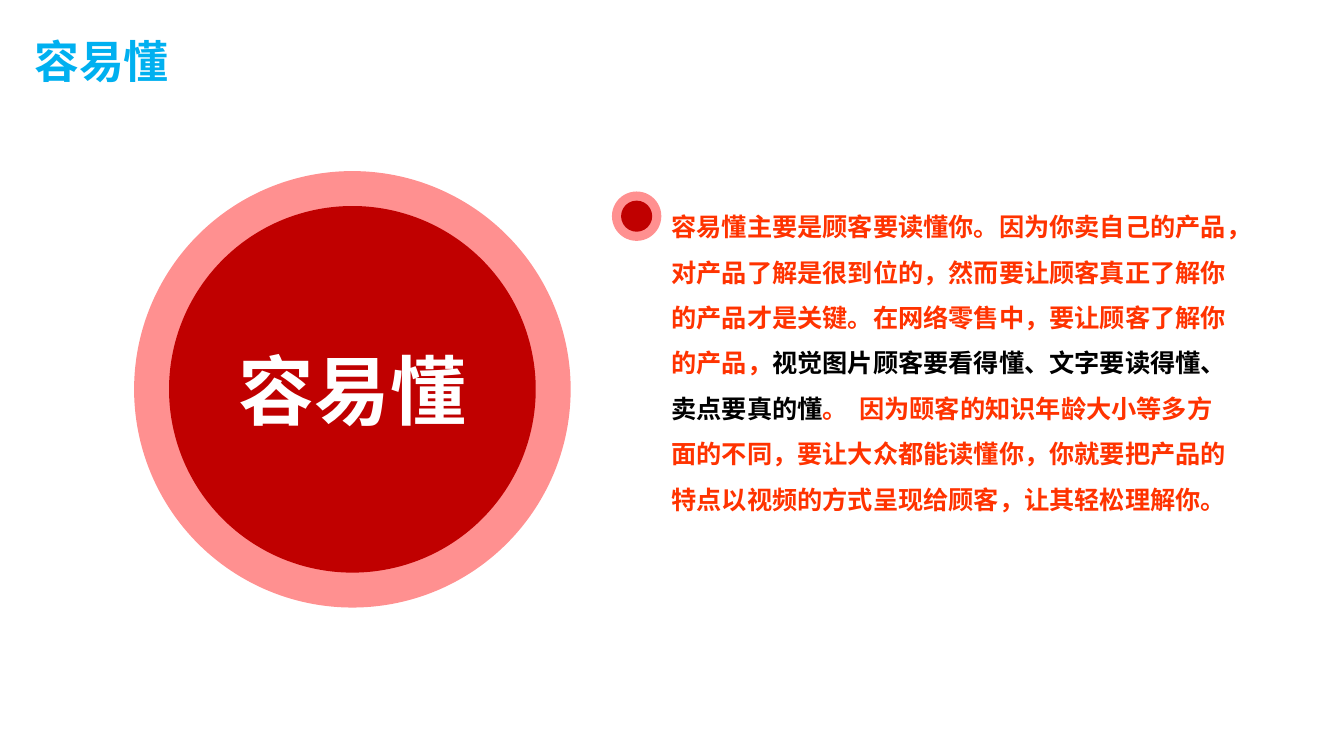
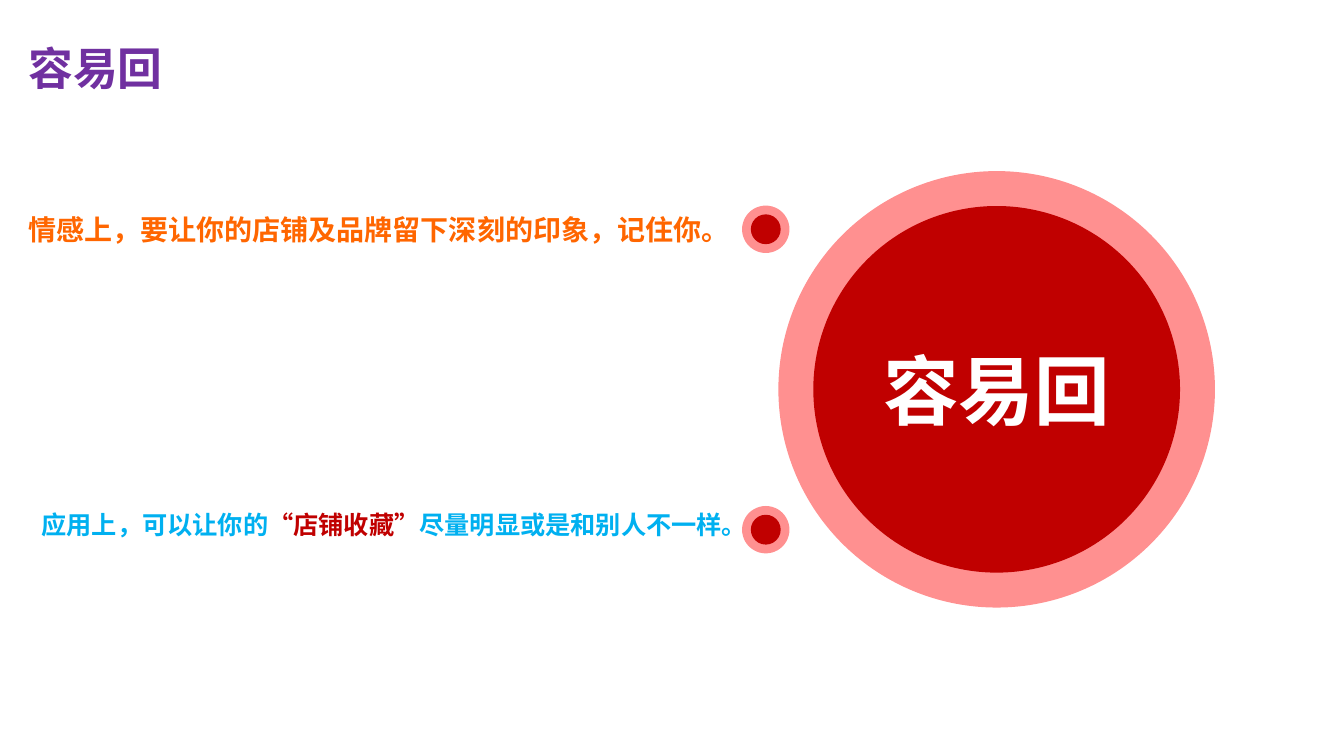
from pptx import Presentation, util as u
from pptx.dml.color import RGBColor
from pptx.enum import lang, shapes, text
from pptx.oxml.ns import qn
from lxml import etree

CJK, LATIN = "Noto Sans CJK SC", "Arial"
WHITE, BLACK, RED, PINK = "FFFFFF", "000000", "C00000", "FF9090"
ORANGE_RED, ORANGE, BLUE, PURPLE = "FF3300", "FF6600", "00B0F0", "7030A0"

prs = Presentation()
prs.slide_width, prs.slide_height = u.Inches(13.33), u.Inches(7.5)
W, H = prs.slide_width / 100, prs.slide_height / 100  # one percent of the slide


def rgb(code):
    return RGBColor.from_string(code)


def write(tf, runs, size, font, align=text.PP_ALIGN.LEFT,
          anchor=text.MSO_ANCHOR.TOP, wrap=True, spacing=1):
    """Fill a text frame with one unbulleted paragraph of (text, colour) runs."""
    tf.auto_size = text.MSO_AUTO_SIZE.NONE
    tf.word_wrap, tf.vertical_anchor = wrap, anchor
    p = tf.paragraphs[0]
    p.alignment, p.line_spacing, p.space_before = align, spacing, u.Pt(0)
    pPr = p._p.get_or_add_pPr()
    pPr.set("marL", "0")
    pPr.set("indent", "0")
    etree.SubElement(pPr, qn("a:buNone"))
    for words, colour in runs:
        r = p.add_run()
        r.text = words
        r.font.size, r.font.bold, r.font.name = u.Pt(size), True, font
        r.font.color.rgb = rgb(colour)
        r.font.language_id = lang.MSO_LANGUAGE_ID.SIMPLIFIED_CHINESE
        r.font._element.find(qn("a:latin")).addnext(
            etree.Element(qn("a:ea"), typeface=CJK))


# Boxes are (left, top, width, height), in percent of the slide.
# Dots are (centre x, centre y), in percent; diameters are in percent of the height.
slides = [
    dict(layout=1, title="容易懂", colour=BLUE, title_at=(1.8, 3.73),
         disc_x=26.22, dots=[(47.37, 28.6)], dot_size=6.53,
         bodies=[((49.21, 25.33, 43.36, 43.73), 18, 1.5, [
             ("容易懂主要是顾客要读懂你。因为你卖自己的产品，对产品了解是很到位的，"
              "然而要让顾客真正了解你的产品才是关键。在网络零售中，"
              "要让顾客了解你的产品，", ORANGE_RED),
             ("视觉图片顾客要看得懂、文字要读得懂、卖点要真的懂", BLACK),
             ("。  因为颐客的知识年龄大小等多方面的不同，要让大众都能读懂你，"
              "你就要把产品的特点以视频的方式呈现给顾客，让其轻松理解你。", ORANGE_RED)])]),
    dict(layout=3, title="容易回", colour=PURPLE, title_at=(1.35, 4.67),
         disc_x=74.16, dots=[(56.98, 30.33), (56.98, 70.07)], dot_size=6.27,
         bodies=[((1.35, 27.47, 52.89, 5.87), 20, 1, [
             ("情感上，要让你的店铺及品牌留下深刻的印象，记住你。", ORANGE)]),
             ((2.33, 66.67, 52.89, 5.33), 18, 1, [
                 ("应用上，可以让你的", BLUE),
                 ("“店铺收藏”", RED),
                 ("尽量明显或是和别人不一样。", BLUE)])]),
]

for page in slides:
    s = prs.slides.add_slide(prs.slide_layouts[page["layout"]])

    # Title and body text
    blocks = [((*page["title_at"], 11.55, 8.53), 32, 1,
               [(page["title"], page["colour"])])] + page["bodies"]
    for sp, (box, size, spacing, runs) in zip(s.placeholders, blocks):
        sp.left, sp.top, sp.width, sp.height = (
            round(share * unit) for share, unit in zip(box, (W, H, W, H)))
        is_title = sp == s.shapes.title
        write(sp.text_frame, runs, size, CJK if is_title else LATIN,
              wrap=not is_title, spacing=spacing)

    # Large disc and bullet dots: a pink ring around a red core
    discs = [(page["disc_x"], 51.5, 57.73, 0.84)]
    discs += [(x, y, page["dot_size"], 0.63) for x, y in page["dots"]]
    cores = []
    for x, y, size, core_share in discs:
        group = s.shapes.add_group_shape()
        for share, colour in ((1, PINK), (core_share, RED)):
            d = size * share * H
            sp = group.shapes.add_shape(
                shapes.MSO_SHAPE.OVAL, round(x * W - d / 2),
                round(y * H - d / 2), round(d), round(d))
            sp.shadow.inherit = False
            sp.fill.solid()
            sp.fill.fore_color.rgb = rgb(colour)
            sp.line.fill.background()
        cores.append(sp)

    # Label in the large disc
    write(cores[0].text_frame, [(page["title"], WHITE)], 54, CJK,
          text.PP_ALIGN.CENTER, text.MSO_ANCHOR.MIDDLE, wrap=False)

prs.save("out.pptx")
